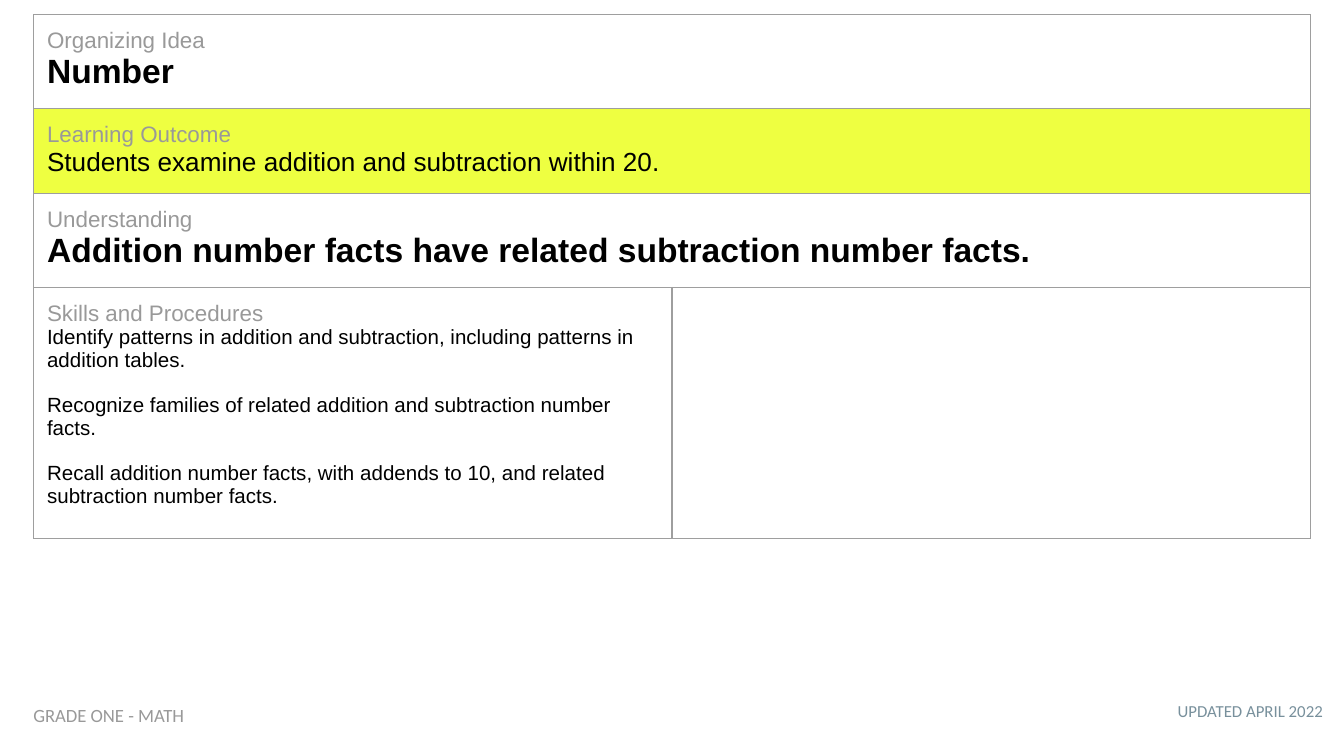
from dataclasses import dataclass
from typing import Optional

from lxml import etree
from pptx import Presentation
from pptx.dml import color
from pptx.enum import text
from pptx.oxml import ns
from pptx.util import Inches, Pt


@dataclass(frozen=True)
class Theme:
    body: str = "Arial"
    foot: str = "Calibri"
    ink: str = "000000"
    grey: str = "999999"
    slate: str = "78909C"
    lime: str = "EEFF41"
    rule: str = "9E9E9E"
    label: float = 12
    head: float = 18
    goal: float = 14
    skill: float = 11
    gap: float = 12
    line: float = 0.75
    inset: float = 0.1


@dataclass(frozen=True)
class Band:
    label: str
    lines: tuple[str, ...]
    size: float
    height: float
    bold: bool = False
    fill: Optional[str] = None
    split: bool = False
    joined: bool = False


@dataclass(frozen=True)
class Note:
    words: str
    left: float
    top: float
    width: float
    height: float
    size: float
    tint: str
    align: text.PP_ALIGN


T = Theme()
BANDS = (
    Band("Organizing Idea", ("Number",), T.head, 0.7, bold=True, joined=True),
    Band("Learning Outcome",
         ("Students examine addition and subtraction within 20.",),
         T.goal, 0.63, fill=T.lime, joined=True),
    Band("Understanding",
         ("Addition number facts have related subtraction number facts.",),
         T.head, 0.7, bold=True),
    Band("Skills and Procedures",
         ("Identify patterns in addition and subtraction, including patterns in addition tables.",
          "Recognize families of related addition and subtraction number facts.",
          "Recall addition number facts, with addends to 10, and related subtraction number facts."),
         T.skill, 1.87, split=True),
)
NOTES = (
    Note("UPDATED APRIL 2022", 7.24, 5.14, 2.7, 0.35, 9, T.slate, text.PP_ALIGN.RIGHT),
    Note("GRADE ONE - MATH", 0.15, 5.15, 3.01, 0.37, 10, T.grey, text.PP_ALIGN.LEFT),
)


def add_run(para, words: str, size: float, tint: str, face: str, bold: bool = False) -> None:
    run = para.add_run()
    run.text = words
    run.font.size = Pt(size)
    run.font.name = face
    run.font.bold = bold
    run.font.color.rgb = color.RGBColor.from_string(tint)


def pad(box) -> None:
    box.margin_left = box.margin_right = Inches(T.inset)
    box.margin_top = box.margin_bottom = Inches(T.inset)


def style_cell(cell, fill: Optional[str]) -> None:
    pad(cell)
    props = cell._tc.get_or_add_tcPr()
    for side in ("lnL", "lnR", "lnT", "lnB"):
        edge = etree.SubElement(props, ns.qn(f"a:{side}"), w=str(Pt(T.line)))
        solid = etree.SubElement(edge, ns.qn("a:solidFill"))
        etree.SubElement(solid, ns.qn("a:srgbClr"), val=T.rule)
    if fill:
        cell.fill.solid()
        cell.fill.fore_color.rgb = color.RGBColor.from_string(fill)
    else:
        cell.fill.background()


def fill_cell(cell, band: Band) -> None:
    frame = cell.text_frame
    para = frame.paragraphs[0]
    add_run(para, band.label, T.label, T.grey, T.body)
    for i, words in enumerate(band.lines):
        if band.joined:
            para.add_line_break()
        else:
            para = frame.add_paragraph()
            para.space_before = Pt(T.gap if i else 0)
        add_run(para, words, band.size, T.ink, T.body, band.bold)


def draw_table(slide, bands: tuple[Band, ...]) -> None:
    height = sum(band.height for band in bands)
    table = slide.shapes.add_table(
        len(bands), 2, Inches(0.25), Inches(0.11), Inches(9.5), Inches(height)).table
    table.first_row = table.horz_banding = False
    for i, band in enumerate(bands):
        row = table.rows[i]
        row.height = Inches(band.height)
        for cell in row.cells:
            style_cell(cell, band.fill)
        if not band.split:
            table.cell(i, 0).merge(table.cell(i, 1))
        fill_cell(table.cell(i, 0), band)


def draw_note(slide, note: Note) -> None:
    box = slide.shapes.add_textbox(
        Inches(note.left), Inches(note.top), Inches(note.width), Inches(note.height))
    frame = box.text_frame
    frame.word_wrap = True
    pad(frame)
    para = frame.paragraphs[0]
    para.alignment = note.align
    add_run(para, note.words, note.size, note.tint, T.foot)


def main() -> None:
    deck = Presentation()
    deck.slide_width = Inches(10)
    deck.slide_height = deck.slide_width * 9 // 16
    slide = deck.slides.add_slide(deck.slide_layouts[6])
    draw_table(slide, BANDS)
    for note in NOTES:
        draw_note(slide, note)
    deck.save("out.pptx")


if __name__ == "__main__":
    main()
